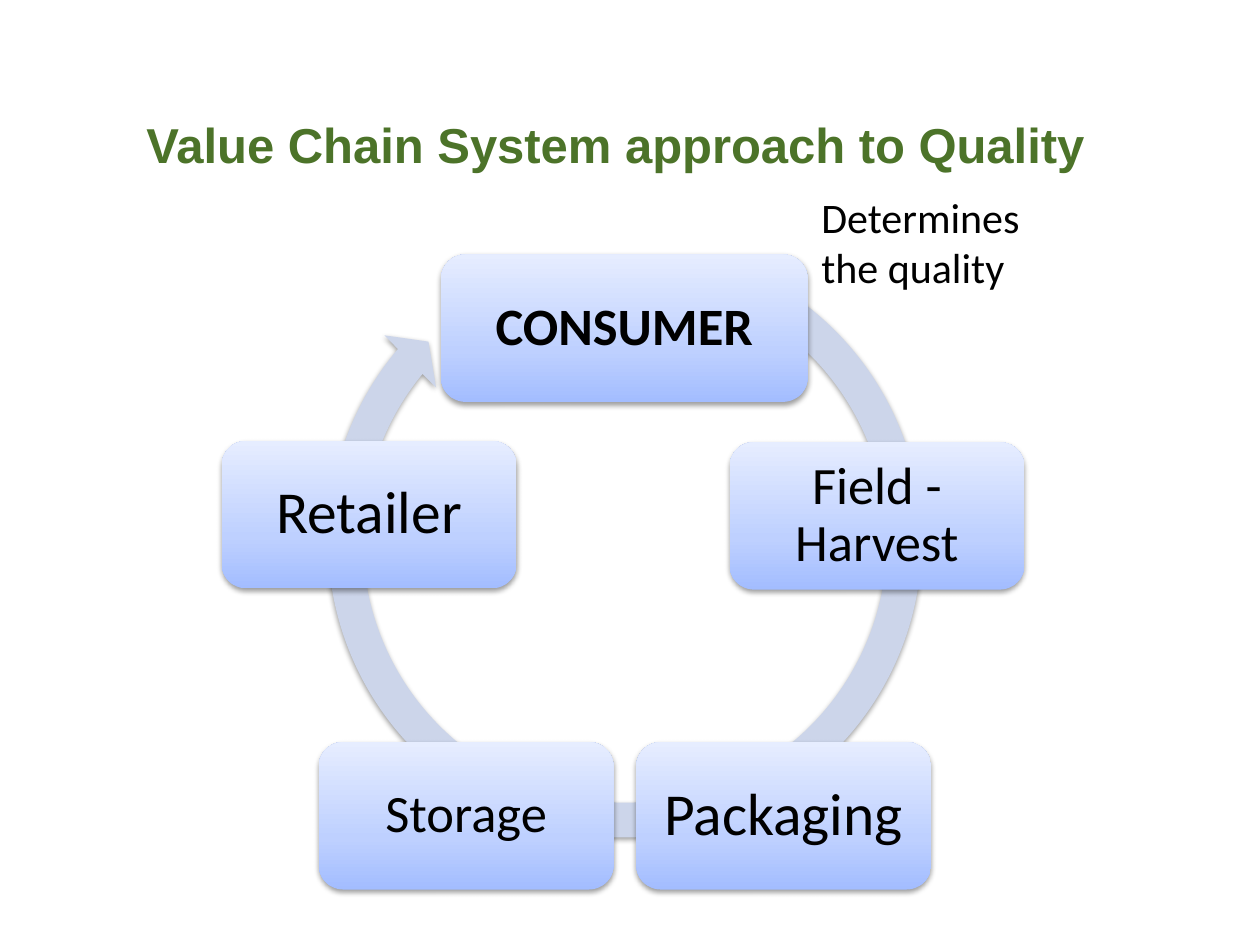
from copy import deepcopy

from lxml import etree
from pptx import Presentation
from pptx.dml.color import RGBColor
from pptx.enum.shapes import MSO_SHAPE
from pptx.enum.text import MSO_ANCHOR, PP_ALIGN
from pptx.oxml import parse_xml
from pptx.oxml.ns import nsdecls, qn
from pptx.util import Inches, Pt

GREEN = RGBColor(0x4C, 0x73, 0x29)
BLACK = RGBColor(0x00, 0x00, 0x00)
RING = RGBColor(0xCC, 0xD5, 0xEA)
STAGE_GRADIENT = [
    (0, RGBColor(0xA3, 0xBD, 0xFF)),
    (0.35, RGBColor(0xBE, 0xD0, 0xFF)),
    (1, RGBColor(0xE6, 0xED, 0xFF)),
]

STAGE_W, CONSUMER_W, STAGE_H = 2.34, 2.91, 1.17
# label, left and top within the cycle, width, text size, bold, inset
STAGES = [
    ("CONSUMER", 1.74, 0.24, CONSUMER_W, 30, True, 0.12),
    ("Field - Harvest", 4.03, 1.73, STAGE_W, 30, False, 0.12),
    ("Packaging", 3.29, 4.11, STAGE_W, 34, False, 0.14),
    ("Storage", 0.77, 4.11, STAGE_W, 30, False, 0.12),
    ("Retailer", 0, 1.72, STAGE_W, 34, False, 0.14),
]


def add_run(paragraph, text, font_name, size, color, bold=False):
    run = paragraph.add_run()
    run.text = text
    font = run.font
    font.name, font.size, font.bold = font_name, Pt(size), bold
    font.color.rgb = color


def add_soft_shadow(shape):
    shape.shadow.inherit = False
    effects = shape._element.spPr.find(qn("a:effectLst"))
    effects.append(parse_xml(
        f'<a:outerShdw {nsdecls("a")} blurRad="40000" dist="20000" '
        'dir="5400000" rotWithShape="0"><a:srgbClr val="000000">'
        '<a:alpha val="38000"/></a:srgbClr></a:outerShdw>'))


def fill_with_gradient(shape):
    shape.fill.gradient()
    shape.fill.gradient_angle = 90
    stop_list = shape._element.spPr.find(".//" + qn("a:gsLst"))
    stop_list.append(deepcopy(stop_list[-1]))
    for stop, (position, color) in zip(shape.fill.gradient_stops, STAGE_GRADIENT):
        stop.position = position
        stop.color.rgb = color


def place_title(slide, left, top, width, height):
    title = slide.shapes.title
    title.left, title.top = Inches(left), Inches(top)
    title.width, title.height = Inches(width), Inches(height)
    title.text_frame.vertical_anchor = MSO_ANCHOR.MIDDLE
    paragraph = title.text_frame.paragraphs[0]
    paragraph.alignment = PP_ALIGN.CENTER
    add_run(paragraph, "Value Chain System approach to Quality", "Arial", 28, GREEN, True)


def add_ring(slide, left, top, size):
    ring = slide.shapes.add_shape(
        MSO_SHAPE.CIRCULAR_ARROW, Inches(left), Inches(top), Inches(size), Inches(size))
    for index, value in enumerate([0.055, 3.307, 131.901, 177.537, 0.058]):
        ring.adjustments[index] = value
    ring.fill.solid()
    ring.fill.fore_color.rgb = RING
    ring.line.fill.background()
    add_soft_shadow(ring)


def add_stage(slide, label, left, top, width, size, bold, inset):
    stage = slide.shapes.add_shape(
        MSO_SHAPE.ROUNDED_RECTANGLE,
        Inches(left), Inches(top), Inches(width), Inches(STAGE_H))
    fill_with_gradient(stage)
    stage.line.fill.background()
    add_soft_shadow(stage)
    frame = stage.text_frame
    frame.word_wrap = True
    frame.vertical_anchor = MSO_ANCHOR.MIDDLE
    frame.margin_left = frame.margin_right = Inches(inset)
    frame.margin_top = frame.margin_bottom = Inches(inset)
    paragraph = frame.paragraphs[0]
    paragraph.alignment = PP_ALIGN.CENTER
    paragraph.line_spacing = 0.9
    add_run(paragraph, label, "Calibri", size, BLACK, bold)


def add_cycle(slide, left, top):
    add_ring(slide, left + 0.69, top, 5.02)
    for label, dx, dy, *style in STAGES:
        add_stage(slide, label, left + dx, top + dy, *style)


def add_consumer_note(slide, left, top, width, height):
    note = slide.shapes.add_textbox(
        Inches(left), Inches(top), Inches(width), Inches(height))
    note.text_frame.word_wrap = True
    add_run(note.text_frame.paragraphs[0], "Determines the quality", "Calibri", 24, BLACK)


def main():
    deck = Presentation()
    deck.slide_width, deck.slide_height = Inches(10), Inches(7.5)
    slide = deck.slides.add_slide(deck.slide_layouts.get_by_name("Title Only"))
    place_title(slide, 0.67, 0.52, 8.43, 1.25)
    add_cycle(slide, 1.76, 1.78)
    add_consumer_note(slide, 6.42, 1.47, 2.11, 0.91)
    deck.save("out.pptx")


if __name__ == "__main__":
    main()
